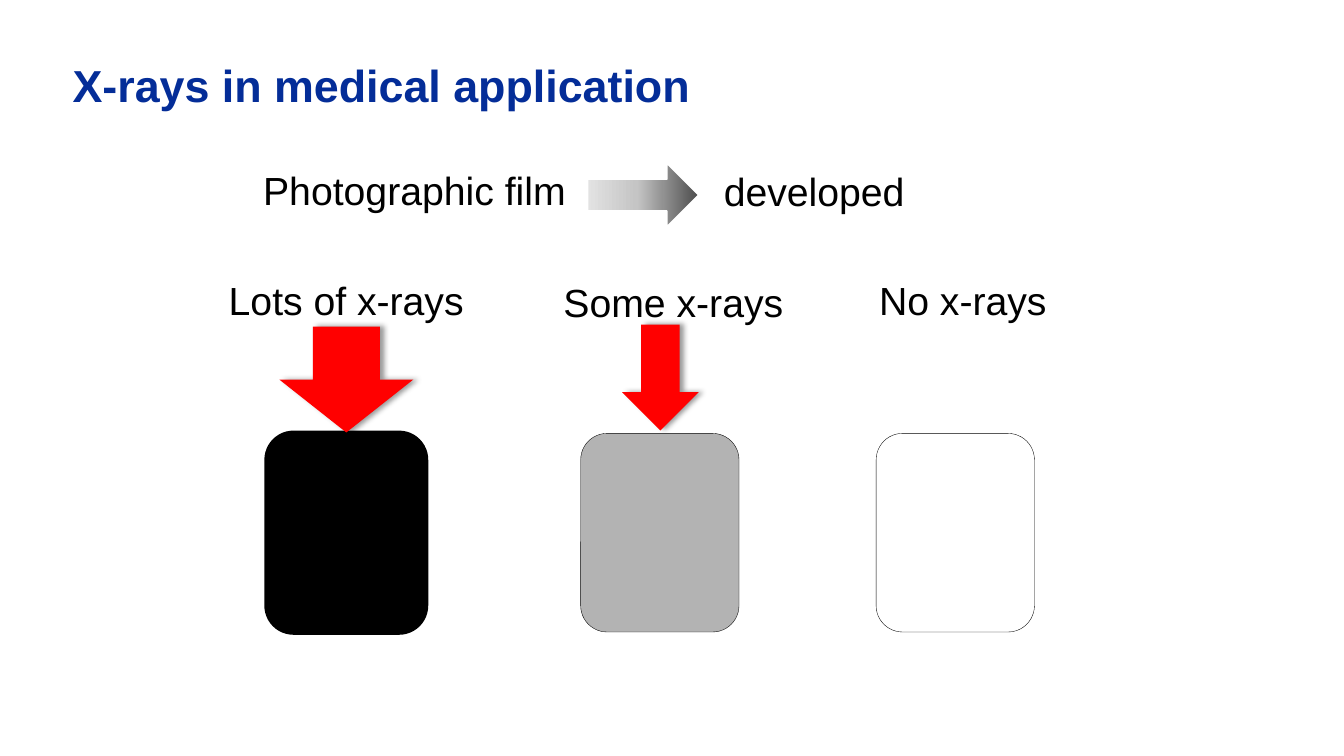
import copy

import lxml.etree
import pptx
import pptx.dml.color
import pptx.enum.shapes
import pptx.enum.text
import pptx.oxml
import pptx.oxml.ns
import pptx.util

Inches = pptx.util.Inches
SHAPE = pptx.enum.shapes.MSO_SHAPE


def paint(color, value):
    color.rgb = pptx.dml.color.RGBColor.from_string(value)


def write(slide, text, left, top, width, height, size=28, color="000000", bold=False, inset=0.1, wrap=False):
    box = slide.shapes.add_textbox(Inches(left), Inches(top), Inches(width), Inches(height))
    frame = box.text_frame
    frame.word_wrap = wrap
    frame.vertical_anchor = pptx.enum.text.MSO_ANCHOR.TOP
    frame.margin_left = frame.margin_right = Inches(inset)
    frame.margin_top = frame.margin_bottom = Inches(inset / 2)
    run = frame.paragraphs[0].add_run()
    run.text = text
    run.font.name = "Arial"
    run.font.size = pptx.util.Pt(size)
    run.font.bold = bold
    paint(run.font.color, color)


def draw(slide, kind, left, top, width, height, fill=None, line=None, weight=0):
    shape = slide.shapes.add_shape(kind, Inches(left), Inches(top), Inches(width), Inches(height))
    shape.shadow.inherit = False
    if fill:
        shape.fill.solid()
        paint(shape.fill.fore_color, fill)
    if line:
        paint(shape.line.color, line)
        shape.line.width = pptx.util.Pt(weight)
    else:
        shape.line.fill.background()
    return shape


def shade(shape, stops):
    shape.fill.gradient()
    shape.fill.gradient_angle = 0
    items = shape._element.spPr.find(".//" + pptx.oxml.ns.qn("a:gsLst"))
    items.append(copy.deepcopy(items[-1]))
    for stop, (place, color) in zip(shape.fill.gradient_stops, stops):
        stop.position = place
        paint(stop.color, color)


def cast(shape):
    effects = shape._element.spPr.find(pptx.oxml.ns.qn("a:effectLst"))
    effects.append(pptx.oxml.parse_xml(
        f'<a:outerShdw {pptx.oxml.ns.nsdecls("a")} blurRad="50800" dist="38100" dir="0" '
        'algn="l" rotWithShape="0"><a:srgbClr val="000000"><a:alpha val="40000"/>'
        '</a:srgbClr></a:outerShdw>'))


def main():
    deck = pptx.Presentation()
    deck.slide_width = Inches(13.33)
    deck.slide_height = Inches(7.5)
    slide = deck.slides.add_slide(deck.slide_layouts[6])

    write(slide, "X-rays in medical application", 0.72, 0.57, 11.89, 1.06,
          size=32, color="042D98", bold=True, inset=0, wrap=True)
    write(slide, "Photographic film", 2.61, 1.65, 3.09, 0.57, inset=0, wrap=True)
    arrow = draw(slide, SHAPE.RIGHT_ARROW, 5.83, 1.62, 1.1, 0.63, line="FFFFFF", weight=1)
    shade(arrow, [(0, "E2E2E2"), (0.44, "C5C5C5"), (1, "4D4D4D")])
    write(slide, "developed", 7.08, 1.61, 2.02, 0.57)

    for left, fill, weight in [(2.65, "000000", 4), (5.76, "B3B3B3", 0.25), (8.69, "FFFFFF", 0.25)]:
        draw(slide, SHAPE.ROUNDED_RECTANGLE, left, 4.3, 1.57, 1.97, fill, "000000", weight)
    for text, left, top, width in [("Lots of x-rays", 2.17, 2.69, 2.56),
                                   ("Some x-rays", 5.49, 2.71, 2.41),
                                   ("No x-rays", 8.62, 2.69, 1.88)]:
        write(slide, text, left, top, width, 0.57)
    for left, top, width in [(2.77, 3.24, 1.33), (6.17, 3.22, 0.76)]:
        cast(draw(slide, SHAPE.DOWN_ARROW, left, top, width, 1.05, "FF0000"))

    deck.save("out.pptx")


if __name__ == "__main__":
    main()
